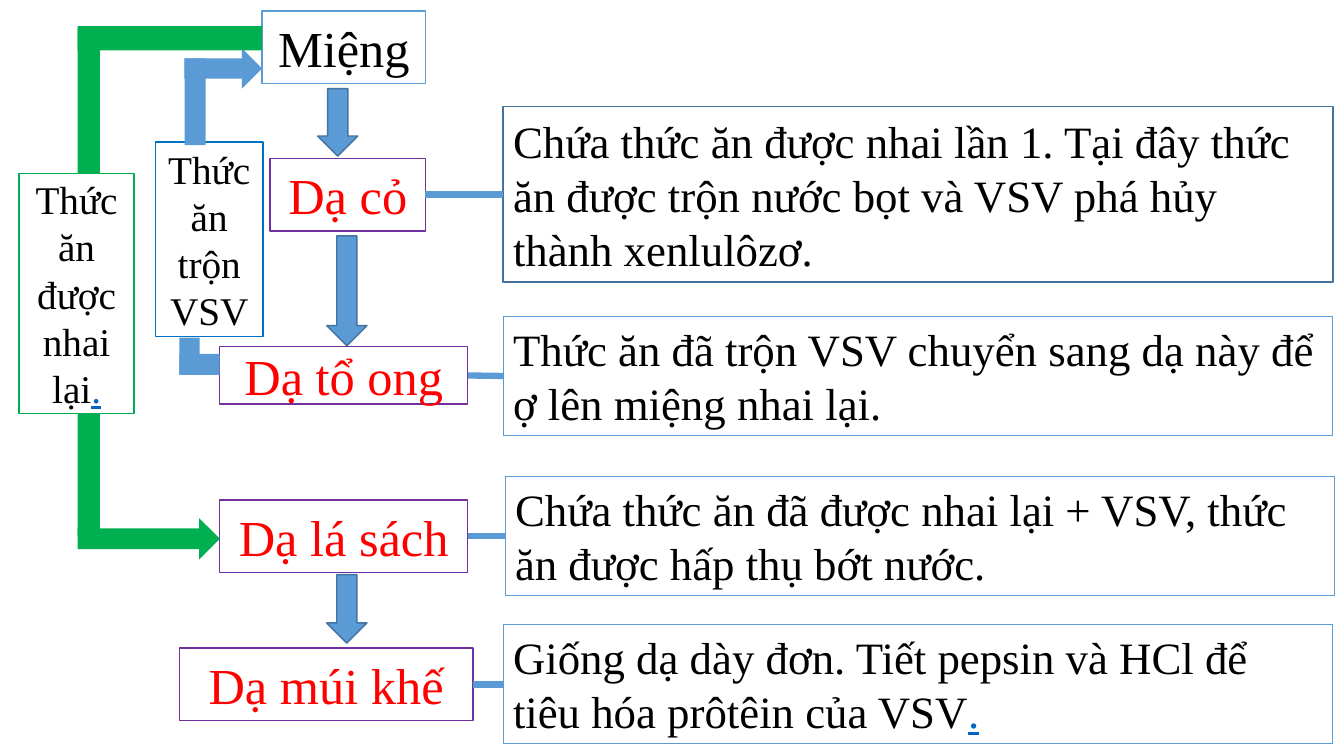
from lxml import etree
from pptx import Presentation
from pptx.dml.color import RGBColor
from pptx.enum.shapes import MSO_CONNECTOR, MSO_SHAPE
from pptx.enum.text import MSO_ANCHOR, PP_ALIGN
from pptx.oxml.ns import qn
from pptx.util import Inches, Pt

RECT = MSO_SHAPE.RECTANGLE
DOWN = MSO_SHAPE.DOWN_ARROW
RIGHT = MSO_SHAPE.RIGHT_ARROW
STRAIGHT = MSO_CONNECTOR.STRAIGHT
MIDDLE = MSO_ANCHOR.MIDDLE
TOP = MSO_ANCHOR.TOP
CENTER = PP_ALIGN.CENTER
LEFT = PP_ALIGN.LEFT

FONT = "Times New Roman"
COLORS = {
    "black": "000000",
    "red": "FF0000",
    "blue": "5B9BD5",
    "navy": "43739E",
    "azure": "0070C0",
    "purple": "7030A0",
    "green": "00B050",
    "link": "0563C1",
}

# left, top, width, height of each stomach, its name, then the same for its note
STOMACHS = [
    ((2.68, 1.57, 1.54, 0.72), "Dạ cỏ", (4.99, 1.06, 8.23, 1.74), "navy", MIDDLE,
     ["Chứa thức ăn được nhai lần 1. Tại đây thức ăn được trộn nước bọt "
      "và VSV phá hủy thành xenlulôzơ."]),
    ((2.18, 3.44, 2.46, 0.57), "Dạ tổ ong", (4.99, 3.14, 8.23, 1.18), "blue", TOP,
     ["Thức ăn đã trộn VSV chuyển sang dạ này để ợ lên miệng nhai lại."]),
    ((2.18, 4.96, 2.46, 0.72), "Dạ lá sách", (5.01, 4.73, 8.23, 1.18), "blue", TOP,
     ["Chứa thức ăn đã được nhai lại + VSV, thức ăn được hấp thụ bớt nước."]),
    ((1.78, 6.43, 2.91, 0.72), "Dạ múi khế", (4.99, 6.2, 8.23, 1.18), "blue", TOP,
     ["Giống dạ dày đơn. Tiết pepsin và HCl để tiêu hóa prôtêin của VSV", "."]),
]
STEPS = [(3.15, 0.88, 0.4, 0.67), (3.24, 2.34, 0.4, 1.09), (3.24, 5.7, 0.4, 0.68)]


def rgb(name):
    return RGBColor.from_string(COLORS[name])


def add_block(shapes, kind, at, fill=None, line=None, width=1):
    block = shapes.add_shape(kind, *map(Inches, at))
    block.shadow.inherit = False
    if fill:
        block.fill.solid()
        block.fill.fore_color.rgb = rgb(fill)
    else:
        block.fill.background()
    if line:
        block.line.color.rgb = rgb(line)
        block.line.width = Pt(width)
    else:
        block.line.fill.background()
    return block


def add_box(shapes, at, texts, size, line, color="black", align=CENTER,
            anchor=MIDDLE, width=1):
    """Add a framed text; any run after the first looks like a link."""
    box = add_block(shapes, RECT, at, line=line, width=width)
    frame = box.text_frame
    frame.word_wrap = True
    frame.vertical_anchor = anchor
    para = frame.paragraphs[0]
    para.alignment = align
    for i, text in enumerate(texts):
        run = para.add_run()
        run.text = text
        run.font.name = FONT
        run.font.size = Pt(size)
        run.font.color.rgb = rgb("link" if i else color)
        if i:
            run.font.underline = True
    return box


def add_link(shapes, start, end):
    """Join the right side of one box to the left side of another."""
    link = shapes.add_connector(STRAIGHT, 0, 0, 0, 0)
    link.begin_connect(start, 3)
    link.end_connect(end, 1)
    link.line.color.rgb = rgb("blue")
    link.line.width = Pt(4.5)
    etree.SubElement(link._element.spPr, qn("a:effectLst"))


def add_loop(shapes, label, bars, arrow, fill, line):
    """Group a label with the bars and the arrow that pass through it."""
    group = shapes.add_group_shape().shapes
    at, texts = label
    add_box(group, at, texts, 28, line)
    for bar in bars:
        add_block(group, RECT, bar, fill=fill)
    add_block(group, RIGHT, arrow, fill=fill)


def main():
    deck = Presentation()
    deck.slide_width = Inches(13.33)
    deck.slide_height = Inches(7.5)
    shapes = deck.slides.add_slide(deck.slide_layouts[6]).shapes

    for at, name, place, line, anchor, texts in STOMACHS:
        note = add_box(shapes, place, texts, 32, line, align=LEFT, anchor=anchor,
                       width=1 if line == "navy" else 0.75)
        stomach = add_box(shapes, at, [name], 36, "purple", color="red")
        add_link(shapes, stomach, note)

    add_box(shapes, (2.6, 0.11, 1.62, 0.72), ["Miệng"], 36, "blue")
    for at in STEPS:
        add_block(shapes, DOWN, at, fill="blue", line="navy")

    add_loop(shapes, ((1.54, 1.41, 1.07, 1.93), ["Thức ăn trộn VSV"]),
             [(1.78, 3.51, 0.4, 0.21), (1.78, 3.35, 0.2, 0.37),
              (1.83, 0.58, 0.21, 0.86)],
             (1.83, 0.48, 0.77, 0.4), "blue", "azure")
    add_loop(shapes, ((0.19, 1.72, 1.14, 2.38), ["Thức ăn được nhai lại", "."]),
             [(0.77, 0.26, 1.83, 0.24), (0.77, 0.28, 0.22, 1.44),
              (0.77, 4.1, 0.22, 1.22)],
             (0.77, 5.14, 1.41, 0.41), "green", "green")

    deck.save("out.pptx")


if __name__ == "__main__":
    main()
